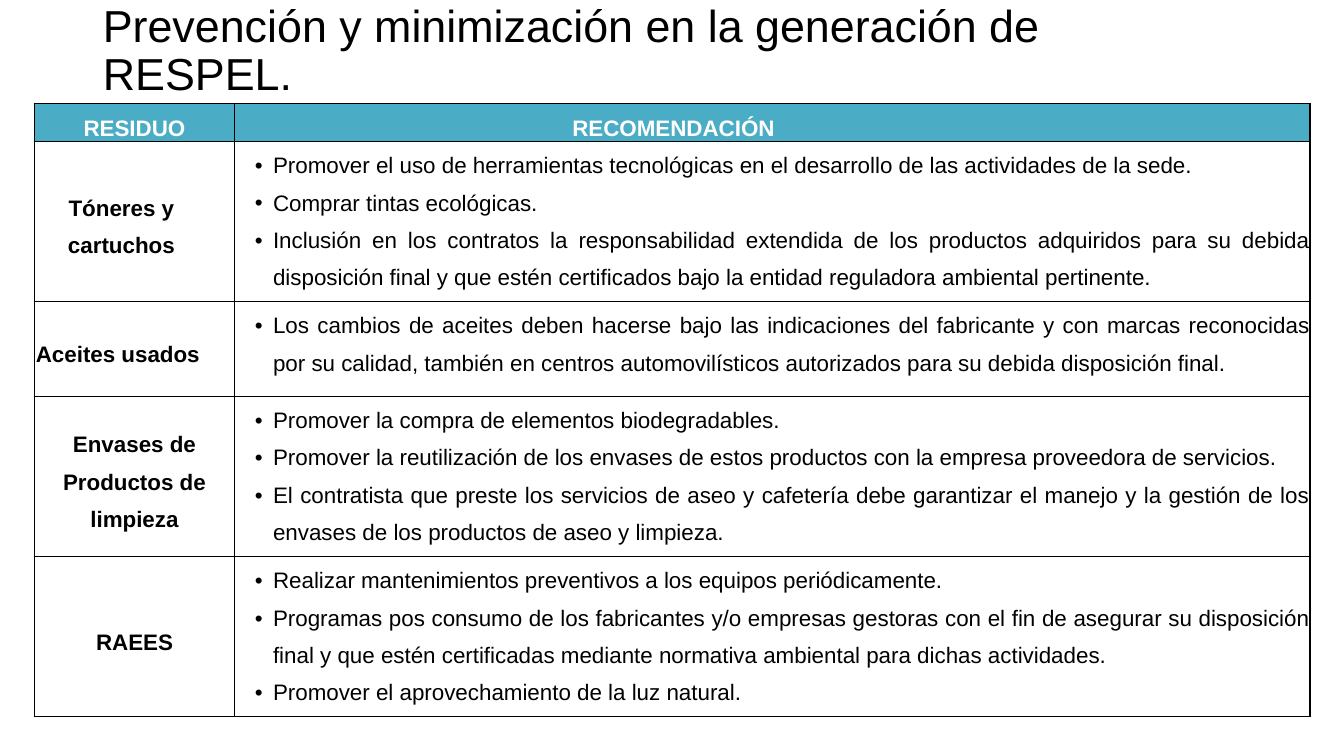
from dataclasses import dataclass

from lxml import etree
from pptx import Presentation
from pptx import util as u
from pptx.dml.color import RGBColor
from pptx.enum import text as t
from pptx.oxml import ns


@dataclass(frozen=True)
class Theme:
    font: str = "Arial"
    ink: str = "000000"
    paper: str = "FFFFFF"
    header: str = "4AACC5"
    title_size: int = 32
    table_size: int = 16
    border: float = 1
    title_spacing: float = 0.9
    table_spacing: float = 1.5
    bullet_margin: float = 0.38
    bullet_hang: float = 0.18


TITLE = "Prevención y minimización en la generación de RESPEL."
HEADINGS = [("RESIDUO", 0), ("RECOMENDACIÓN", 1.96)]
COLUMN_SHARES = [14.92, 80]
ROW_SHARES = [4, 21.2, 12.53, 21.2, 21.2]
WASTES = [
    (["Tóneres y cartuchos"], 0.26, [
        "Promover el uso de herramientas tecnológicas en el desarrollo de las actividades de la sede.",
        "Comprar tintas ecológicas.",
        "Inclusión en los contratos la responsabilidad extendida de los productos adquiridos para su debida "
        "disposición final y que estén certificados bajo la entidad reguladora ambiental pertinente.",
    ]),
    (["Aceites usados"], 0.33, [
        "Los cambios de aceites deben hacerse bajo las indicaciones del fabricante y con marcas reconocidas "
        "por su calidad, también en centros automovilísticos autorizados para su debida disposición final.",
    ]),
    (["Envases de", "Productos de limpieza"], 0, [
        "Promover la compra de elementos biodegradables.",
        "Promover la reutilización de los envases de estos productos con la empresa proveedora de servicios.",
        "El contratista que preste los servicios de aseo y cafetería debe garantizar el manejo y la gestión "
        "de los envases de los productos de aseo y limpieza.",
    ]),
    (["RAEES"], 0, [
        "Realizar mantenimientos preventivos a los equipos periódicamente.",
        "Programas pos consumo de los fabricantes y/o empresas gestoras con el fin de asegurar su disposición "
        "final y que estén certificadas mediante normativa ambiental para dichas actividades.",
        "Promover el aprovechamiento de la luz natural.",
    ]),
]


def write(frame, lines, *, font, size, color, align, spacing, bold=False, bullet=None, margin=0, hang=0, right=0):
    for index, line in enumerate(lines):
        para = frame.paragraphs[0] if index == 0 else frame.add_paragraph()
        para.alignment = align
        para.line_spacing = spacing
        para.space_before = para.space_after = u.Pt(0)
        span = para.add_run()
        span.text = line
        span.font.name = font
        span.font.size = u.Pt(size)
        span.font.bold = bold
        span.font.color.rgb = RGBColor.from_string(color)
        properties = para._p.get_or_add_pPr()
        properties.set("marL", str(u.Inches(margin)))
        properties.set("marR", str(u.Inches(right)))
        properties.set("indent", str(u.Inches(-hang)))
        if bullet:
            etree.SubElement(properties, ns.qn("a:buFont"), typeface=font)
            etree.SubElement(properties, ns.qn("a:buChar"), char=bullet)


class Page:
    def __init__(self, deck, theme):
        self.deck = deck
        self.theme = theme
        self.slide = deck.slides.add_slide(deck.slide_layouts[5])

    def across(self, share):
        return round(self.deck.slide_width * share / 100)

    def down(self, share):
        return round(self.deck.slide_height * share / 100)

    def title(self, words, left, top, width, height):
        box = self.slide.shapes.title
        box.left, box.top = self.across(left), self.down(top)
        box.width, box.height = self.across(width), self.down(height)
        frame = box.text_frame
        frame.word_wrap = True
        frame.auto_size = t.MSO_AUTO_SIZE.NONE
        frame.vertical_anchor = t.MSO_ANCHOR.MIDDLE
        frame.margin_right = u.Inches(0.25)
        write(frame, [words], font=self.theme.font, size=self.theme.title_size, color=self.theme.ink,
              align=t.PP_ALIGN.LEFT, spacing=self.theme.title_spacing)

    def table(self, left, top, columns, rows):
        graphic = self.slide.shapes.add_table(
            len(rows), len(columns), self.across(left), self.down(top),
            self.across(sum(columns)), self.down(sum(rows)))
        grid = graphic.table
        grid.horz_banding = False
        for column, share in zip(grid.columns, columns):
            column.width = self.across(share)
        for row, share in zip(grid.rows, rows):
            row.height = self.down(share)
        return grid

    def cell(self, cell, lines, *, fill=None, anchor=t.MSO_ANCHOR.TOP, **style):
        cell.margin_left = cell.margin_right = cell.margin_top = cell.margin_bottom = 0
        cell.vertical_anchor = anchor
        if fill:
            cell.fill.solid()
            cell.fill.fore_color.rgb = RGBColor.from_string(fill)
        else:
            cell.fill.background()
        self.borders(cell)
        style = {"color": self.theme.ink, "align": t.PP_ALIGN.CENTER, **style}
        write(cell.text_frame, lines, font=self.theme.font, size=self.theme.table_size,
              spacing=self.theme.table_spacing, **style)

    def borders(self, cell):
        properties = cell._tc.get_or_add_tcPr()
        for index, side in enumerate(["lnL", "lnR", "lnT", "lnB"]):
            line = etree.Element(ns.qn(f"a:{side}"), w=str(u.Pt(self.theme.border)))
            paint = etree.SubElement(line, ns.qn("a:solidFill"))
            etree.SubElement(paint, ns.qn("a:srgbClr"), val=self.theme.ink)
            properties.insert(index, line)


def main():
    deck = Presentation()
    deck.slide_width, deck.slide_height = u.Inches(13.33), u.Inches(7.5)
    theme = Theme()
    page = Page(deck, theme)
    page.title(TITLE, 6.9, 0, 86.25, 13.73)
    grid = page.table(2.55, 13.73, COLUMN_SHARES, ROW_SHARES)
    for column, (heading, right) in enumerate(HEADINGS):
        page.cell(grid.cell(0, column), [heading], fill=theme.header, color=theme.paper, bold=True, right=right)
    for row, (waste, right, advice) in enumerate(WASTES, start=1):
        page.cell(grid.cell(row, 0), waste, anchor=t.MSO_ANCHOR.MIDDLE, bold=True, right=right)
        page.cell(grid.cell(row, 1), advice, align=t.PP_ALIGN.JUSTIFY, bullet="•",
                  margin=theme.bullet_margin, hang=theme.bullet_hang)
    deck.save("out.pptx")


if __name__ == "__main__":
    main()
